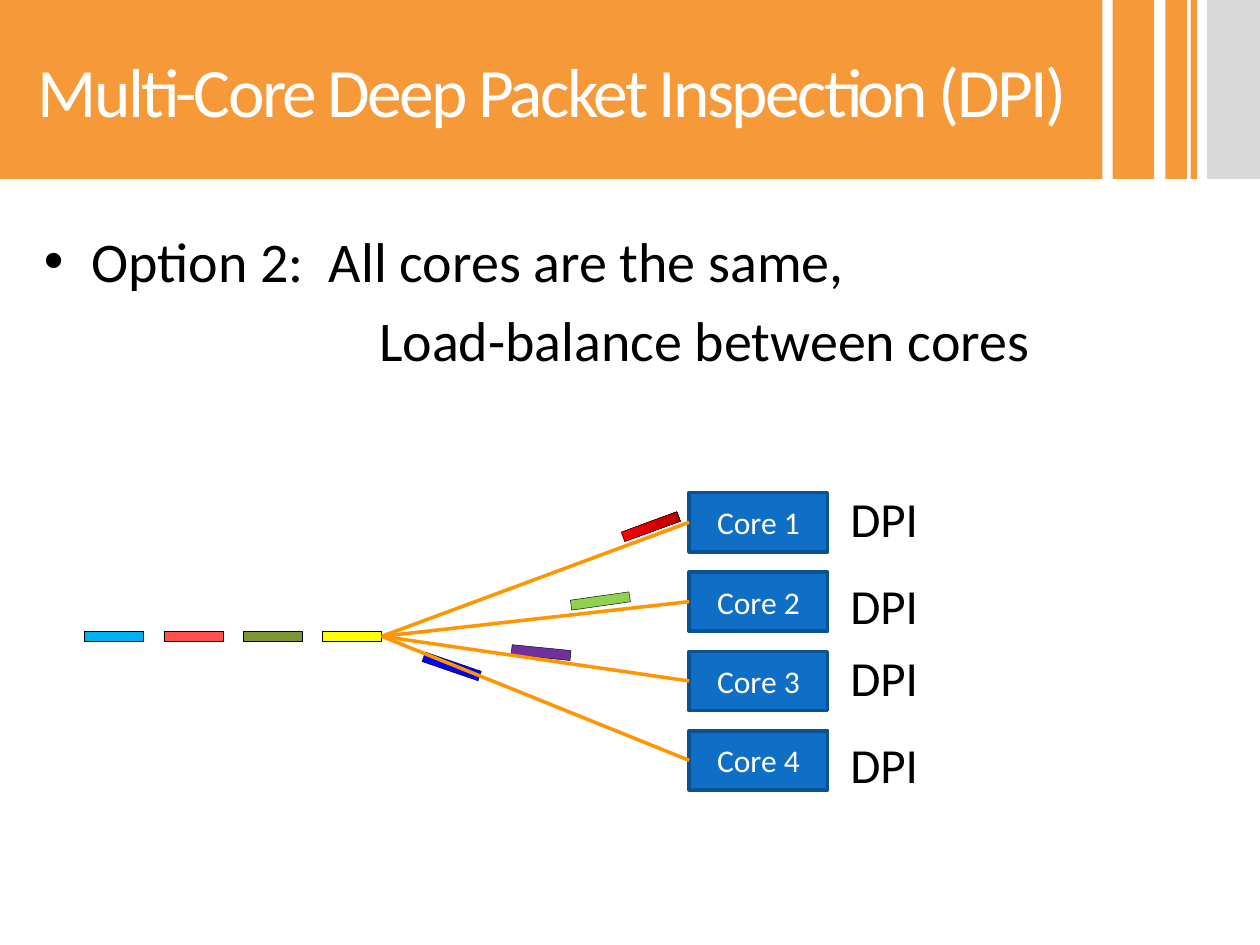
from lxml import etree
from pptx import Presentation
from pptx.dml.color import RGBColor
from pptx.enum.shapes import MSO_CONNECTOR, MSO_SHAPE
from pptx.enum.text import MSO_ANCHOR, PP_ALIGN
from pptx.oxml.ns import qn
from pptx.util import Inches, Pt

RECTANGLE = MSO_SHAPE.RECTANGLE
STRAIGHT = MSO_CONNECTOR.STRAIGHT
MIDDLE = MSO_ANCHOR.MIDDLE
LEFT, CENTER = PP_ALIGN.LEFT, PP_ALIGN.CENTER

# The grid has 100 columns and 75 rows of square cells
CELL = Inches(0.1)
COLUMNS, ROWS = 100, 75
ORANGE, GREY, WHITE, BLACK = "F69939", "D9D9D9", "FFFFFF", "000000"


def color(hex_string):
    return RGBColor.from_string(hex_string)


def grid(*cells):
    return [round(cell * CELL) for cell in cells]


def write(paragraph, text, size=18, fill=BLACK, font="Calibri", align=LEFT,
          spacing=None, before=0, margin=0, indent=0, bullet=None):
    """Fill one paragraph; margin and indent are in grid columns."""
    paragraph.alignment = align
    paragraph.space_before = Pt(before)
    properties = paragraph._p.get_or_add_pPr()
    left, first = grid(margin, indent)
    properties.set("marL", str(left))
    properties.set("indent", str(first))
    if bullet:
        etree.SubElement(properties, qn("a:buFont")).set("typeface", "Arial")
        etree.SubElement(properties, qn("a:buChar")).set("char", bullet)
    run = paragraph.add_run()
    run.text = text
    run.font.name = font
    run.font.size = Pt(size)
    run.font.color.rgb = color(fill)
    if spacing is not None:
        run._r.get_or_add_rPr().set("spc", str(round(spacing * 100)))


class DiagramSlide:
    packet_size = (4.7, 0.8)
    core_size = (11, 4.7)

    def __init__(self, presentation):
        self.slide = presentation.slides.add_slide(presentation.slide_layouts[6])
        self.shapes = self.slide.shapes

    def box(self, left, top, width, height, fill, line=None, line_width=0.25):
        shape = self.shapes.add_shape(RECTANGLE, *grid(left, top, width, height))
        shape.shadow.inherit = False
        if isinstance(fill, tuple):
            shape.fill.gradient()
            shape.fill.gradient_angle = 0
            for stop, stop_fill in zip(shape.fill.gradient_stops, fill):
                stop.color.rgb = color(stop_fill)
        else:
            shape.fill.solid()
            shape.fill.fore_color.rgb = color(fill)
        if line:
            shape.line.color.rgb = color(line)
            shape.line.width = Pt(line_width)
        else:
            shape.line.fill.background()
        return shape

    def title(self, text, width, height):
        frame = self.box(0, 0, width, height, ORANGE).text_frame
        frame.margin_left = 3 * CELL
        frame.vertical_anchor = MIDDLE
        write(frame.paragraphs[0], text, size=39.6, fill=WHITE, spacing=-1.5)

    def text(self, left, top, width, height, wrap=True):
        box = self.shapes.add_textbox(*grid(left, top, width, height))
        box.text_frame.word_wrap = wrap
        return box.text_frame

    def packet(self, left, top, fill, rotation=0):
        self.box(left, top, *self.packet_size, fill, BLACK).rotation = rotation

    def core(self, left, top, name):
        shape = self.box(left, top, *self.core_size, "0F6FC6", "0B5292", 2)
        shape.text_frame.vertical_anchor = MIDDLE
        write(shape.text_frame.paragraphs[0], name, fill=WHITE, align=CENTER)

    def link(self, start, end):
        connector = self.shapes.add_connector(STRAIGHT, *grid(*start, *end))
        connector.line.color.rgb = color("FF9600")
        connector.line.width = Pt(2)
        etree.SubElement(connector._element.spPr, qn("a:effectLst"))


def main():
    presentation = Presentation()
    presentation.slide_width = COLUMNS * CELL
    presentation.slide_height = ROWS * CELL
    diagram = DiagramSlide(presentation)

    # Header band and its stripes
    header_height = 14.2
    for left, width, fill in [(88.3, 3.3, ORANGE), (92.5, 1.7, ORANGE),
                              (94.5, 0.5, ORANGE), (95.8, 4.2, GREY)]:
        diagram.box(left, 0, width, header_height, fill)
    diagram.title("Multi-Core Deep Packet Inspection (DPI)", 87.5, header_height)

    # Body text: a bullet and its indented continuation
    body = diagram.text(2.5, 17.5, 92.5, 49.5)
    write(body.paragraphs[0], "Option 2:  All cores are the same,", size=32,
          before=6.4, margin=3.75, indent=-3.75, bullet="•")
    write(body.add_paragraph(), "Load-balance between cores", size=32,
          before=6.4, margin=26.6)

    # Cores in one column
    pitch = 6.3
    core_left = 54.7
    core_tops = [39.1 + index * pitch for index in range(4)]
    for number, top in enumerate(core_tops, start=1):
        diagram.core(core_left, top, f"Core {number}")

    # Packets waiting in the queue
    for index, fill in enumerate(["00B0F0", "FF5050", "7E9632", "FFFF00"]):
        diagram.packet(6.7 + index * pitch, 50.1, fill)

    # Packets on their way to a core, behind the links
    for left, top, fill, rotation in [(33.5, 52.5, "0000FF", 19),
                                      (40.6, 51.4, "7030A0", 5.7),
                                      (45.3, 47.3, "92D050", 351.9)]:
        diagram.packet(left, top, fill, rotation)

    # Links from the end of the queue to each core
    for top in core_tops:
        diagram.link((30.3, 50.5), (core_left, top + diagram.core_size[1] / 2))

    # Task of each core
    for top in [38.3, 45.2, 50.9, 57.8]:
        label = diagram.text(66.5, top, 7.5, 5.7, wrap=False)
        write(label.paragraphs[0], "DPI", size=28)

    # Packet arriving at the first core
    diagram.packet(49.3, 41.4, ("FF0000", "B60000"), 339.9)

    presentation.save("out.pptx")


if __name__ == "__main__":
    main()
